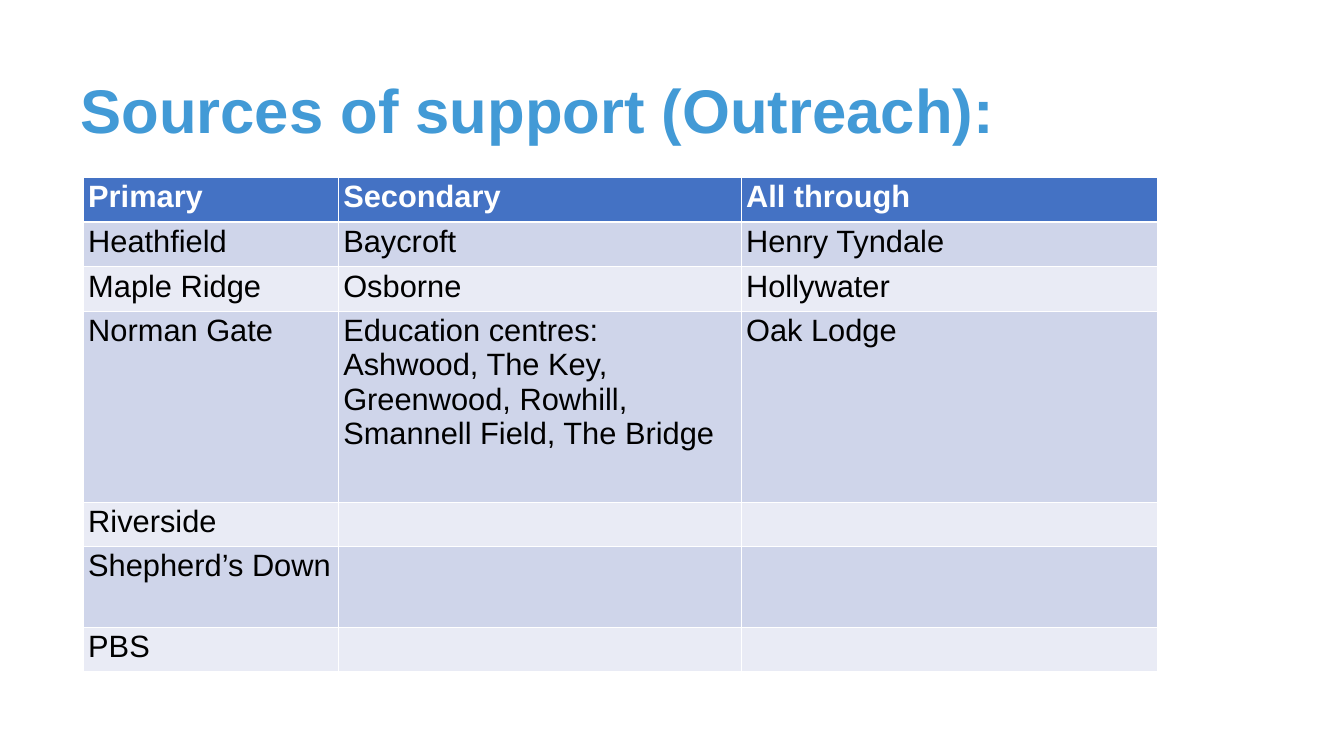
import pptx
import pptx.dml.color
import pptx.enum.text
import pptx.oxml
import pptx.oxml.ns
import pptx.util

Pt = pptx.util.Pt
RGBColor = pptx.dml.color.RGBColor

FONT = "Arial"
TITLE_BLUE = RGBColor(0x42, 0x9A, 0xD6)
HEADER_BLUE = RGBColor(0x44, 0x72, 0xC4)
BAND_DARK = RGBColor(0xCF, 0xD5, 0xEA)
BAND_LIGHT = RGBColor(0xE9, 0xEB, 0xF5)
WHITE = RGBColor(0xFF, 0xFF, 0xFF)
BLACK = RGBColor(0x00, 0x00, 0x00)

COLUMN_WIDTHS = [364.32, 575.28, 594.72]
ROW_HEIGHTS = [64.8, 63.36, 63.36, 272.88, 63.36, 115.92, 63.36]
SUPPORT = [
    ["Primary", "Secondary", "All through"],
    ["Heathfield", "Baycroft", "Henry Tyndale"],
    ["Maple Ridge", "Osborne", "Hollywater"],
    ["Norman Gate",
     "Education centres: Ashwood, The Key, Greenwood, Rowhill, "
     "Smannell Field, The Bridge",
     "Oak Lodge"],
    ["Riverside", "", ""],
    ["Shepherd’s Down", "", ""],
    ["PBS", "", ""],
]


def add_run(paragraph, text, size, color, bold):
    run = paragraph.add_run()
    run.text = text
    run.font.name = FONT
    run.font.size = Pt(size)
    run.font.bold = bold
    run.font.color.rgb = color


def add_title(slide, text):
    title = slide.shapes.add_textbox(Pt(108), Pt(57.6), Pt(1679.76), Pt(208.8))
    frame = title.text_frame
    frame.word_wrap = True
    frame.vertical_anchor = pptx.enum.text.MSO_ANCHOR.MIDDLE
    paragraph = frame.paragraphs[0]
    paragraph.line_spacing = 0.9
    add_run(paragraph, text, 88, TITLE_BLUE, True)


def set_borders(cell, top, bottom):
    """Draw white borders; the side borders are 1 pt wide."""
    properties = cell._tc.get_or_add_tcPr()
    for side, width in (("L", 1), ("R", 1), ("T", top), ("B", bottom)):
        properties.append(pptx.oxml.parse_xml(
            f'<a:ln{side} {pptx.oxml.ns.nsdecls("a")} w="{Pt(width)}">'
            f'<a:solidFill><a:srgbClr val="{WHITE}"/></a:solidFill></a:ln{side}>'
        ))


def fill_cell(cell, text, row):
    is_header = row == 0
    set_borders(cell, top=3 if row == 1 else 1, bottom=3 if is_header else 1)
    cell.fill.solid()
    if is_header:
        cell.fill.fore_color.rgb = HEADER_BLUE
    else:
        cell.fill.fore_color.rgb = BAND_DARK if row % 2 else BAND_LIGHT
    if text:
        add_run(cell.text_frame.paragraphs[0], text, 44,
                WHITE if is_header else BLACK, is_header)


def add_support_table(slide):
    table = slide.shapes.add_table(
        len(ROW_HEIGHTS), len(COLUMN_WIDTHS), Pt(118.8), Pt(252.72),
        Pt(sum(COLUMN_WIDTHS)), Pt(sum(ROW_HEIGHTS))).table
    for column, width in zip(table.columns, COLUMN_WIDTHS):
        column.width = Pt(width)
    for row, height in zip(table.rows, ROW_HEIGHTS):
        row.height = Pt(height)
    for row, texts in enumerate(SUPPORT):
        for column, text in enumerate(texts):
            fill_cell(table.cell(row, column), text, row)


def main():
    deck = pptx.Presentation()
    deck.slide_width = Pt(1919.52)
    deck.slide_height = Pt(1080)
    slide = deck.slides.add_slide(deck.slide_layouts[6])
    add_title(slide, "Sources of support (Outreach):")
    add_support_table(slide)
    deck.save("out.pptx")


if __name__ == "__main__":
    main()
